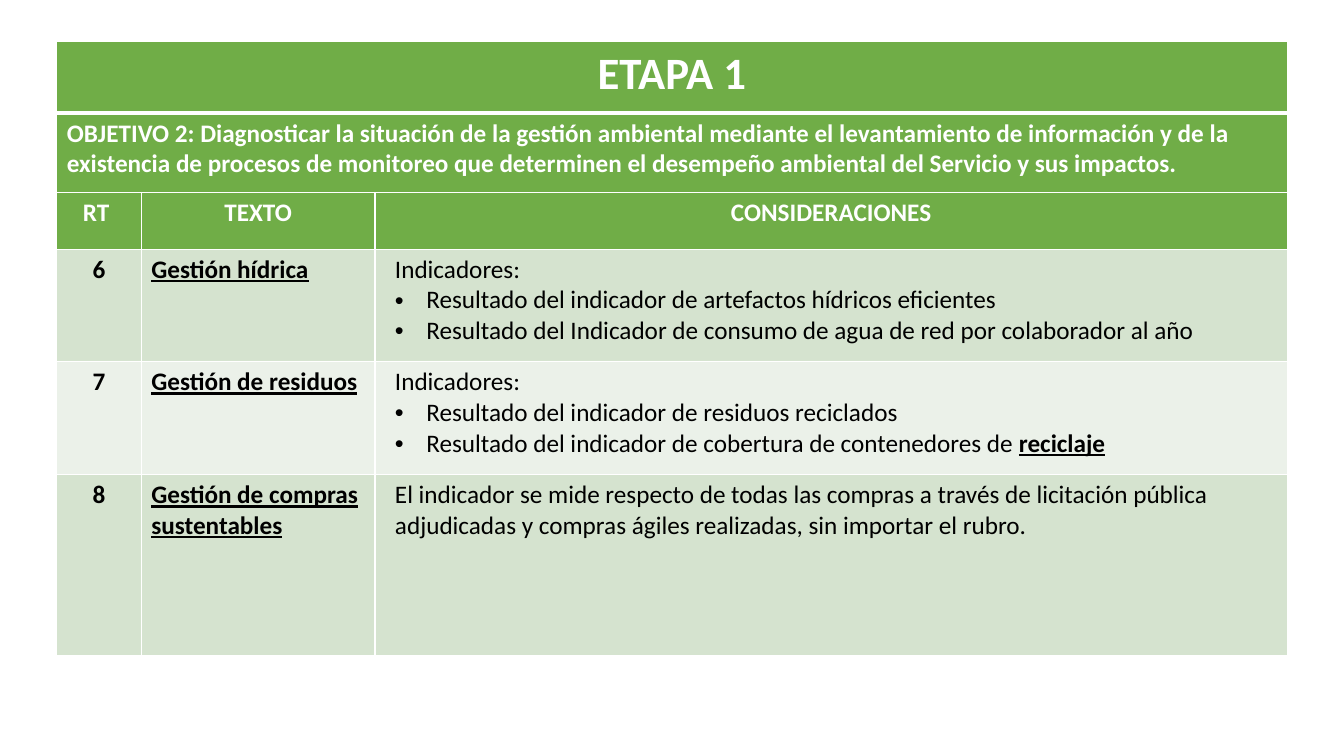
from dataclasses import dataclass

from lxml import etree
from pptx import Presentation
from pptx.dml.color import RGBColor
from pptx.enum.text import PP_ALIGN
from pptx.oxml.ns import qn
from pptx.util import Cm, Pt

LEFT, CENTER = PP_ALIGN.LEFT, PP_ALIGN.CENTER


@dataclass(frozen=True)
class Theme:
    font: str = "Calibri"
    title_size: int = 32
    text_size: int = 18
    white: str = "FFFFFF"
    black: str = "000000"
    header: str = "70AD47"
    band_dark: str = "D5E3CF"
    band_light: str = "EBF1E9"
    thin_border: int = 1
    thick_border: int = 3


theme = Theme()

# Each style: alignment, size, colour, bold, underline
STYLES = {
    "title": (CENTER, theme.title_size, theme.white, True, False),
    "objective": (LEFT, theme.text_size, theme.white, True, False),
    "heading": (CENTER, theme.text_size, theme.white, True, False),
    "number": (CENTER, theme.text_size, theme.black, True, False),
    "topic": (LEFT, theme.text_size, theme.black, True, True),
    "body": (LEFT, theme.text_size, theme.black, False, False),
    "bullet": (LEFT, theme.text_size, theme.black, False, False),
}
# Left margin and first-line indent
INDENTS = {"body": (Cm(0.25), Cm(0)), "bullet": (Cm(1.04), Cm(-0.79))}

COLUMN_WIDTHS = [2.13, 5.89, 22.99]
ROW_HEIGHTS = [1.8, 2.01, 1.42, 2.84, 2.84, 4.57]
ROW_FILLS = [theme.header] * 3 + [theme.band_dark, theme.band_light, theme.band_dark]

# Rows hold cells, cells hold paragraphs, paragraphs hold (style, text) runs
ROWS = [
    [[[("title", "ETAPA 1")]]],
    [[[("objective", "OBJETIVO 2: Diagnosticar la situación de la gestión ambiental mediante "
        "el levantamiento de información y de la existencia de procesos de monitoreo que "
        "determinen el desempeño ambiental del Servicio y sus impactos.")]]],
    [[[("heading", "RT ")]], [[("heading", "TEXTO")]], [[("heading", "CONSIDERACIONES")]]],
    [
        [[("number", "6")]],
        [[("topic", "Gestión hídrica")]],
        [
            [("body", "Indicadores:")],
            [("bullet", "Resultado del indicador de artefactos hídricos eficientes")],
            [("bullet", "Resultado del Indicador de consumo de agua de red por "
              "colaborador al año")],
        ],
    ],
    [
        [[("number", "7")]],
        [[("topic", "Gestión de residuos")]],
        [
            [("body", "Indicadores:")],
            [("bullet", "Resultado del indicador de residuos reciclados")],
            [("bullet", "Resultado del indicador de cobertura de contenedores de "),
             ("topic", "reciclaje")],
        ],
    ],
    [
        [[("number", "8")]],
        [[("topic", "Gestión de compras sustentables")]],
        [[("body", "El indicador se mide respecto de todas las compras a través de licitación "
           "pública adjudicadas y compras ágiles realizadas, sin importar el rubro.")]],
    ],
]


def set_borders(cell, row_index):
    """Draw white cell borders, thicker between the title and the objective."""
    thick_side = {0: "lnB", 1: "lnT"}.get(row_index)
    properties = cell._tc.get_or_add_tcPr()
    for side in ("lnL", "lnR", "lnT", "lnB"):
        width = theme.thick_border if side == thick_side else theme.thin_border
        line = etree.SubElement(properties, qn(f"a:{side}"), w=str(Pt(width)))
        fill = etree.SubElement(line, qn("a:solidFill"))
        etree.SubElement(fill, qn("a:srgbClr"), val=theme.white)


def write_paragraph(paragraph, runs):
    style = runs[0][0]
    paragraph.alignment = STYLES[style][0]
    if style in INDENTS:
        margin, indent = INDENTS[style]
        properties = paragraph._p.get_or_add_pPr()
        properties.set("marL", str(margin))
        properties.set("indent", str(indent))
        if style == "bullet":
            etree.SubElement(properties, qn("a:buFont"), typeface="Arial")
            etree.SubElement(properties, qn("a:buChar"), char="•")
    for run_style, text in runs:
        _, size, color, bold, underline = STYLES[run_style]
        run = paragraph.add_run()
        run.text = text
        font_values = {"name": theme.font, "size": Pt(size), "bold": bold, "underline": underline}
        for name, value in font_values.items():
            setattr(run.font, name, value)
        run.font.color.rgb = RGBColor.from_string(color)


presentation = Presentation()
presentation.slide_width = Cm(33.87)
presentation.slide_height = Cm(19.05)
slide = presentation.slides.add_slide(presentation.slide_layouts[6])

table_shape = slide.shapes.add_table(
    len(ROWS), len(COLUMN_WIDTHS),
    Cm(1.43), Cm(1.05), Cm(sum(COLUMN_WIDTHS)), Cm(sum(ROW_HEIGHTS)),
)
table = table_shape.table
for column, width in zip(table.columns, COLUMN_WIDTHS):
    column.width = Cm(width)
for row, height in zip(table.rows, ROW_HEIGHTS):
    row.height = Cm(height)

for row_index, (cells, fill_color) in enumerate(zip(ROWS, ROW_FILLS)):
    for cell in table.rows[row_index].cells:
        set_borders(cell, row_index)
        cell.fill.solid()
        cell.fill.fore_color.rgb = RGBColor.from_string(fill_color)
    if len(cells) == 1:
        table.cell(row_index, 0).merge(table.cell(row_index, len(COLUMN_WIDTHS) - 1))
    for column_index, paragraphs in enumerate(cells):
        text_frame = table.cell(row_index, column_index).text_frame
        for index, runs in enumerate(paragraphs):
            paragraph = text_frame.add_paragraph() if index else text_frame.paragraphs[0]
            write_paragraph(paragraph, runs)

presentation.save("out.pptx")
